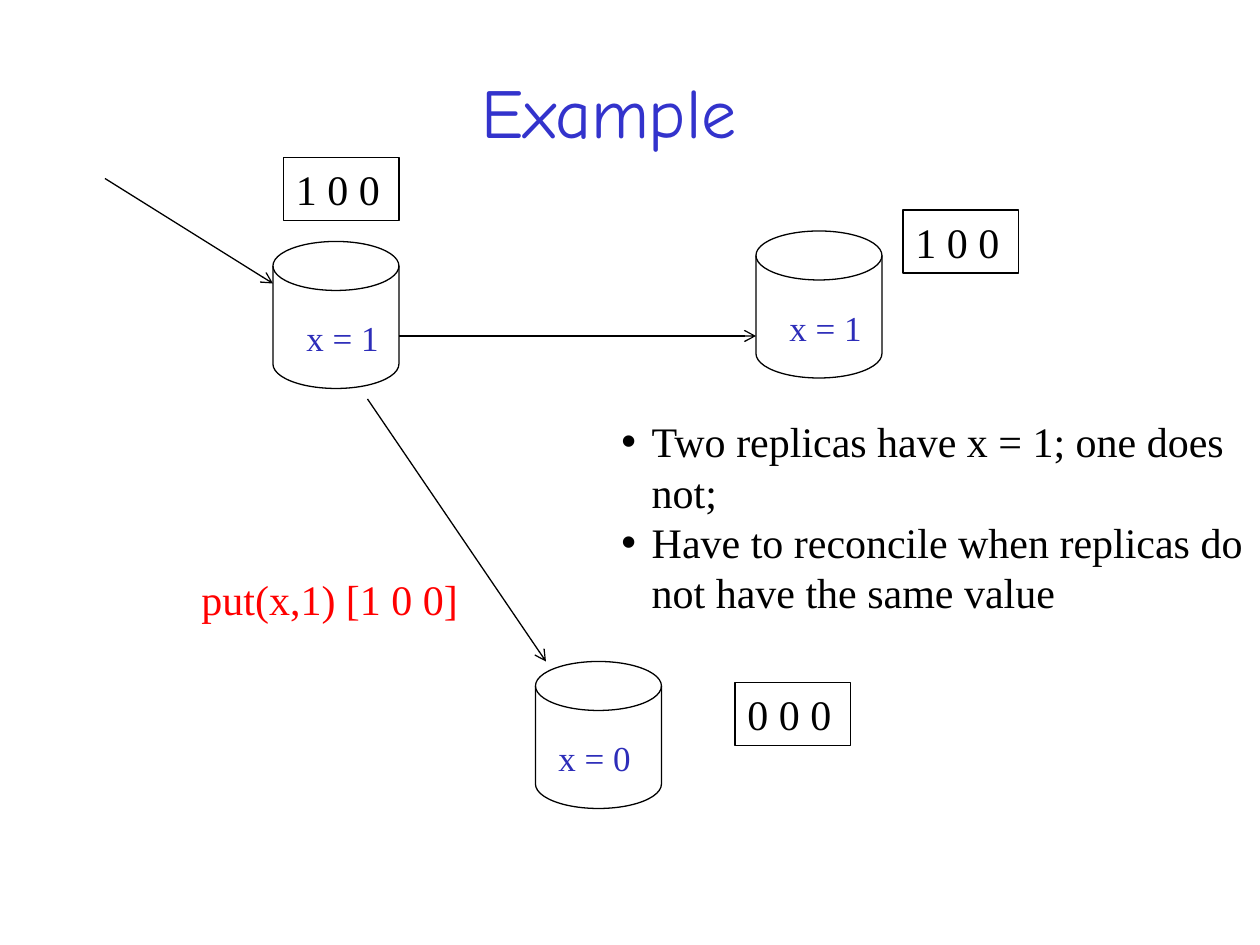
from lxml import etree
from pptx import Presentation, util as u
from pptx.dml.color import RGBColor
from pptx.enum import shapes, text
from pptx.oxml.ns import qn

COLORS = {"title": "3333CC", "ink": "000000", "message": "FF0000", "value": "2D2DB9"}
COLUMNS, ROWS = 120, 90
WIDTH, HEIGHT = u.Inches(10), u.Inches(7.5)


def place(column, row):
    """Turn grid columns and rows into slide lengths."""
    return round(column * WIDTH / COLUMNS), round(row * HEIGHT / ROWS)


def write(shape, *lines, size=24, font="Times New Roman", color="ink", wrap=True,
          align=text.PP_ALIGN.LEFT, anchor=text.MSO_ANCHOR.TOP, bullet=False):
    """Fill a shape with formatted lines of text."""
    frame = shape.text_frame
    frame.word_wrap = wrap
    frame.vertical_anchor = anchor
    for index, line in enumerate(lines):
        paragraph = frame.add_paragraph() if index else frame.paragraphs[0]
        paragraph.alignment = align
        run = paragraph.add_run()
        run.text = line
        run.font.size = u.Pt(size)
        run.font.name = font
        run.font.color.rgb = RGBColor.from_string(COLORS[color])
        if bullet:
            properties = paragraph._p.get_or_add_pPr()
            indent = u.Inches(0.24)
            properties.set("marL", str(indent))
            properties.set("indent", str(-indent))
            etree.SubElement(properties, qn("a:buFont"), typeface="Arial")
            etree.SubElement(properties, qn("a:buChar"), char="•")


def add_text(slide, box, *lines, **style):
    """Add a text box on the grid."""
    write(slide.shapes.add_textbox(*place(*box[:2]), *place(*box[2:])), *lines, **style)


def add_outline(slide, kind, box):
    """Add an unfilled shape with a thin outline."""
    shape = slide.shapes.add_shape(kind, *place(*box[:2]), *place(*box[2:]))
    shape.shadow.inherit = False
    shape.fill.background()
    shape.line.color.rgb = RGBColor.from_string(COLORS["ink"])
    shape.line.width = u.Pt(0.75)
    return shape


def add_arrow(slide, start, end):
    """Add a straight arrow between two grid points."""
    arrow = slide.shapes.add_connector(shapes.MSO_CONNECTOR.STRAIGHT, *place(*start), *place(*end))
    arrow.line.color.rgb = RGBColor.from_string(COLORS["ink"])
    arrow.line.width = u.Pt(0.75)
    etree.SubElement(arrow.line._get_or_add_ln(), qn("a:tailEnd"), type="arrow")
    etree.SubElement(arrow._element.spPr, qn("a:effectLst"))


def add_replica(slide, box, value, value_at, clock, clock_at):
    """Add a replica's store with its value and its vector clock."""
    add_outline(slide, shapes.MSO_SHAPE.FLOWCHART_MAGNETIC_DISK, box)
    add_text(slide, (*value_at, 9.3, 5), value, size=20, color="value", wrap=False)
    write(add_outline(slide, shapes.MSO_SHAPE.RECTANGLE, (*clock_at, 11, 6)), clock)


def add_replicas(slide, box):
    """Add the three replicas and the arrows that carry the update."""
    left, top = box
    replicas = [
        ((0, 8), "x = 1", (2, 14.6), "1 0 0", (1, 0)),
        ((46, 7), "x = 1", (48, 13.6), "1 0 0", (60, 5)),
        ((25, 48), "x = 0", (26, 54.6), "0 0 0", (44, 50)),
    ]
    for (column, row), value, value_at, clock, clock_at in replicas:
        add_replica(slide, (left + column, top + row, 12, 14),
                    value, (left + value_at[0], top + value_at[1]),
                    clock, (left + clock_at[0], top + clock_at[1]))
    for start, end in [((-16, 2), (0, 12)), ((9, 23), (26, 48)), ((12, 17), (46, 17))]:
        add_arrow(slide, (left + start[0], top + start[1]), (left + end[0], top + end[1]))
    add_text(slide, (left - 8, top + 39, 27, 6), "put(x,1) [1 0 0]", color="message", wrap=False)


def add_title(slide, box):
    """Add the centred slide title."""
    add_text(slide, box, "Example", size=40, font="Comic Neue", color="title",
             align=text.PP_ALIGN.CENTER, anchor=text.MSO_ANCHOR.MIDDLE)


def add_conclusions(slide, box):
    """Add the bulleted conclusions."""
    add_text(slide, box, "Two replicas have x = 1; one does not;",
             "Have to reconcile when replicas do not have the same value", bullet=True)


def main():
    """Build and save the slide."""
    deck = Presentation()
    deck.slide_width, deck.slide_height = WIDTH, HEIGHT
    slide = deck.slides.add_slide(deck.slide_layouts[6])
    add_title(slide, (7, 3, 102, 15))
    add_replicas(slide, (26, 15))
    add_conclusions(slide, (58, 39, 62, 20.6))
    deck.save("out.pptx")


if __name__ == "__main__":
    main()
